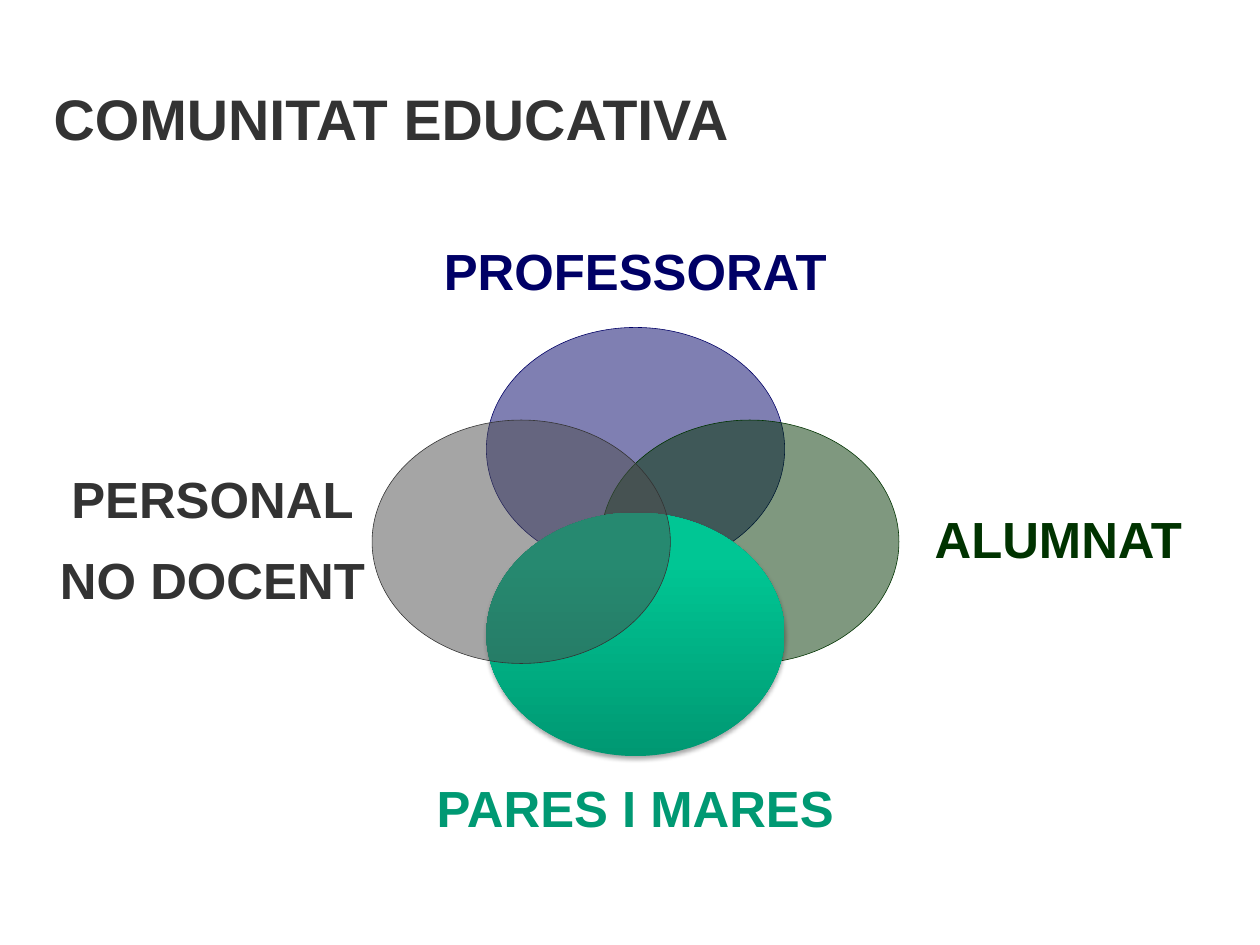
from dataclasses import dataclass

from lxml.etree import SubElement
from pptx import Presentation
from pptx.dml.color import RGBColor
from pptx.enum.shapes import MSO_SHAPE
from pptx.enum.text import MSO_ANCHOR, PP_ALIGN
from pptx.oxml.ns import qn
from pptx.util import Inches, Pt


@dataclass(frozen=True)
class Theme:
    font: str = "Arial"
    title_size: int = 36
    label_size: int = 32
    charcoal: str = "333333"
    gray: str = "4D4D4D"
    navy: str = "000066"
    forest: str = "003300"
    teal: str = "009973"
    teal_gradient: tuple = ((0, "009872"), (80, "00C694"), (100, "00C795"))
    shadow: str = "000000"


THEME = Theme()

# Slide of 28 by 21 centimetres
SLIDE_WIDTH, SLIDE_HEIGHT = Inches(28 / 2.54), Inches(21 / 2.54)

# Diagram geometry in inches, measured from its centre
CENTER_X, CENTER_Y = 5.56, 4.74
OVAL_WIDTH, OVAL_HEIGHT = 2.61, 2.13
OVAL_STEP_X, OVAL_STEP_Y = 1, 0.81
LABEL_WIDTH, LABEL_HEIGHT = 2.29, 0.53
LABEL_STEP_X, LABEL_STEP_Y = 3.7, 2.35


def centered_box(step_x, step_y, width, height):
    left = CENTER_X + step_x - width / 2
    top = CENTER_Y + step_y - height / 2
    return [Inches(length) for length in (left, top, width, height)]


def write_text(shape, *lines, size, color, align=PP_ALIGN.LEFT, wrap=True, gap=0):
    frame = shape.text_frame
    frame.margin_left = frame.margin_right = 0
    frame.margin_top = frame.margin_bottom = 0
    frame.vertical_anchor = MSO_ANCHOR.MIDDLE
    frame.word_wrap = wrap
    for index, line in enumerate(lines):
        paragraph = frame.add_paragraph() if index else frame.paragraphs[0]
        paragraph.alignment = align
        paragraph.line_spacing = 0.93
        paragraph.space_before = Pt(gap if index else 0)
        run = paragraph.add_run()
        run.text = line
        run.font.name = THEME.font
        run.font.size = Pt(size)
        run.font.bold = True
        run.font.color.rgb = RGBColor.from_string(color)


def add_color(parent, color, alpha=None):
    element = SubElement(parent, qn("a:srgbClr"), val=color)
    if alpha is not None:
        SubElement(element, qn("a:alpha"), val=str(alpha * 1000))


def add_plain_shape(group, kind, box):
    shape = group.shapes.add_shape(kind, *box)
    shape.shadow.inherit = False
    shape.fill.background()
    shape.line.fill.background()
    return shape


def add_oval(group, step_x, step_y):
    box = centered_box(step_x * OVAL_STEP_X, step_y * OVAL_STEP_Y,
                       OVAL_WIDTH, OVAL_HEIGHT)
    return add_plain_shape(group, MSO_SHAPE.OVAL, box)


def style_translucent(oval, fill, line):
    oval.fill.solid()
    oval.fill.fore_color.rgb = RGBColor.from_string(fill)
    color = oval.element.spPr.find(qn("a:solidFill")).find(qn("a:srgbClr"))
    SubElement(color, qn("a:alpha"), val="50000")
    oval.line.color.rgb = RGBColor.from_string(line)
    oval.line.width = Pt(0.37)


def style_gradient(oval, stops):
    oval.fill.gradient()
    oval.fill.gradient_angle = 90
    properties = oval.element.spPr
    stop_list = properties.find(qn("a:gradFill")).find(qn("a:gsLst"))
    for old_stop in list(stop_list):
        stop_list.remove(old_stop)
    for position, color in stops:
        add_color(SubElement(stop_list, qn("a:gs"), pos=str(position * 1000)), color)
    # Soft shadow below
    shadow = SubElement(properties.find(qn("a:effectLst")), qn("a:outerShdw"),
                        blurRad=str(Pt(3.1)), dist=str(Pt(1.8)),
                        dir="5400000", rotWithShape="0")
    add_color(shadow, THEME.shadow, 35)


def add_label(group, step_x, step_y, lines, color):
    box = centered_box(step_x * LABEL_STEP_X, step_y * LABEL_STEP_Y,
                       LABEL_WIDTH, LABEL_HEIGHT)
    label = add_plain_shape(group, MSO_SHAPE.RECTANGLE, box)
    write_text(label, *lines, size=THEME.label_size, color=color,
               align=PP_ALIGN.CENTER, wrap=False, gap=15.5)


def main():
    presentation = Presentation()
    presentation.slide_width = SLIDE_WIDTH
    presentation.slide_height = SLIDE_HEIGHT
    slide = presentation.slides.add_slide(presentation.slide_layouts[5])

    # Title
    title = slide.shapes.title
    title.left, title.top = Inches(0.47), Inches(0.71)
    title.width, title.height = Inches(7.72), Inches(0.71)
    write_text(title, "COMUNITAT EDUCATIVA",
               size=THEME.title_size, color=THEME.charcoal)

    # Four overlapping groups: direction, label, label colour, oval fill
    members = (
        (0, -1, ["PROFESSORAT"], THEME.navy, THEME.navy),
        (1, 0, ["ALUMNAT"], THEME.forest, THEME.forest),
        (0, 1, ["PARES I MARES"], THEME.teal, THEME.teal_gradient),
        (-1, 0, ["PERSONAL", "NO DOCENT"], THEME.charcoal, THEME.gray),
    )
    diagram = slide.shapes.add_group_shape()
    for step_x, step_y, lines, color, fill in members:
        oval = add_oval(diagram, step_x, step_y)
        if isinstance(fill, tuple):
            style_gradient(oval, fill)
        else:
            style_translucent(oval, fill, color)
        add_label(diagram, step_x, step_y, lines, color)

    presentation.save("out.pptx")


if __name__ == "__main__":
    main()
